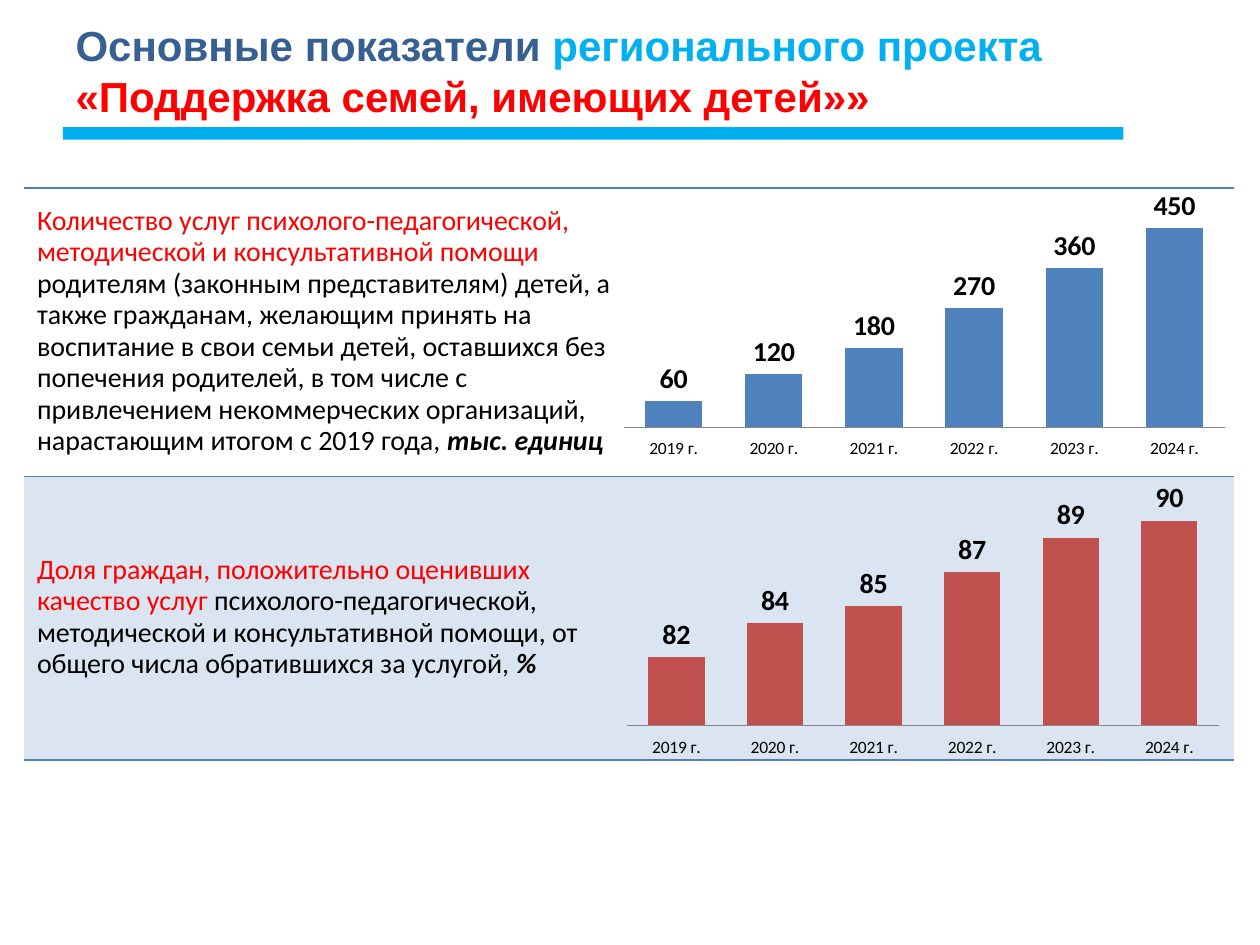
from lxml.etree import SubElement as Sub
from pptx import Presentation
from pptx.chart.data import CategoryChartData as Data
from pptx.dml.color import RGBColor as RGB
from pptx.enum.chart import XL_CHART_TYPE as Kind, XL_LABEL_POSITION as Spot
from pptx.enum.chart import XL_TICK_LABEL_POSITION as Tag, XL_TICK_MARK as Tick
from pptx.enum.shapes import MSO_SHAPE as Form
from pptx.enum.text import MSO_ANCHOR as Anchor, PP_ALIGN as Align
from pptx.oxml.ns import qn
from pptx.util import Pt

HUES = {"navy": "376092", "sky": "00B0F0", "red": "FF0000", "ink": "000000",
        "blue": "4F81BD", "brick": "C0504D", "pale": "DBE5F1", "gray": "868686"}
NONE = "{2D5ABB26-0587-4C30-8999-92F81FD0307C}"
YEARS = [f"{year} г." for year in range(2019, 2025)]
TITLE = [("Основные показатели ", "navy", {}),
         ("регионального проекта ", "sky", {}),
         ("«Поддержка семей, имеющих детей»»", "red", {})]
UNIT = {"bold": True, "italic": True}
ROWS = [
    [("Количество услуг психолого-педагогической, методической и "
      "консультативной помощи ", "red", {}),
     ("родителям (законным представителям) детей, а также гражданам, "
      "желающим принять на воспитание в свои семьи детей, оставшихся без "
      "попечения родителей, в том числе с привлечением некоммерческих "
      "организаций, нарастающим итогом с 2019 года, ", "ink", {}),
     ("тыс. единиц", "ink", UNIT)],
    [("Доля граждан, положительно оценивших качество услуг ", "red", {}),
     ("психолого-педагогической, методической и консультативной помощи, "
      "от общего числа обратившихся за услугой, ", "ink", {}),
     ("%", "ink", UNIT)],
]
COUNT = {"vals": (60, 120, 180, 270, 360, 450), "hue": "blue",
         "scale": {"minimum_scale": 0, "maximum_scale": 500},
         "plot": {"x": 0.02, "y": 0.06, "w": 0.96, "h": 0.84}}
SHARE = {"vals": (82, 84, 85, 87, 89, 90), "hue": "brick",
         "scale": {"minimum_scale": 78, "maximum_scale": 92},
         "plot": {"x": 0.02, "y": 0.02, "w": 0.96, "h": 0.87}}


def style(item, **form):
    """Set each given attribute on an object."""
    for name, value in form.items():
        setattr(item, name, value)


def hue(name):
    """Return a named colour."""
    return RGB.from_string(HUES[name])


def place(box):
    """Turn a box in points into lengths."""
    return [Pt(n) for n in box]


def write(para, parts, **form):
    """Write coloured runs into a paragraph."""
    for text, tint, extra in parts:
        run = para.add_run()
        run.text = text
        style(run.font, **form, **extra)
        run.font.color.rgb = hue(tint)


def head(slide, box):
    """Place the title and the bar below it."""
    x, y, w, h = box
    bar = slide.shapes.add_shape(Form.RECTANGLE, *place((x, y + h - 11.5, w, 7.2)))
    bar.shadow.inherit = False
    bar.fill.solid()
    bar.fill.fore_color.rgb = hue("sky")
    bar.line.fill.background()
    title = slide.shapes.title
    left, top, wide, high = place(box)
    style(title, left=left, top=top, width=wide, height=high)
    style(title.text_frame, word_wrap=True, vertical_anchor=Anchor.TOP)
    para = title.text_frame.paragraphs[0]
    style(para, alignment=Align.LEFT, line_spacing=Pt(29))
    write(para, TITLE, name="Arial", size=Pt(24), bold=True)


def rule(cell):
    """Draw the top and bottom borders of a cell."""
    props = cell._tc.get_or_add_tcPr()
    for at, side in enumerate(("a:lnT", "a:lnB")):
        line = props.makeelement(qn(side), {"w": str(Pt(1))})
        fill = Sub(line, qn("a:solidFill"))
        Sub(fill, qn("a:srgbClr"), val=HUES["blue"])
        props.insert(at, line)


def grid(slide, box, highs):
    """Place the table of indicators."""
    frame = slide.shapes.add_table(len(ROWS), 2, *place(box))
    table = frame.table
    style(table, first_row=False, horz_banding=False)
    table._tbl.tblPr.find(qn("a:tableStyleId")).text = NONE
    for row, high, parts, tint in zip(table.rows, highs, ROWS, (None, "pale")):
        row.height = Pt(high)
        for cell in row.cells:
            style(cell, vertical_anchor=Anchor.MIDDLE, margin_left=Pt(1.5),
                  margin_right=Pt(1.5), margin_top=0, margin_bottom=0)
            if tint:
                cell.fill.solid()
                cell.fill.fore_color.rgb = hue(tint)
            else:
                cell.fill.background()
            rule(cell)
        para = row.cells[0].text_frame.paragraphs[0]
        para._p.get_or_add_pPr().set("marL", str(Pt(6)))
        para.line_spacing = Pt(18)
        write(para, parts, name="Calibri", size=Pt(16))


def layout(chart, plot):
    """Fix the inner plot area as shares of the chart."""
    area = chart._chartSpace.chart.plotArea
    for old in area.findall(qn("c:layout")):
        area.remove(old)
    root = area.makeelement(qn("c:layout"), {})
    area.insert(0, root)
    inner = Sub(root, qn("c:manualLayout"))
    modes = {"layoutTarget": "inner", "xMode": "edge", "yMode": "edge"}
    for name, value in {**modes, **plot}.items():
        Sub(inner, qn(f"c:{name}"), val=str(value))


def bars(slide, box, vals, hue_name, scale, plot):
    """Place one column chart of yearly values."""
    data = Data()
    data.categories = YEARS
    data.add_series("Series 1", vals)
    chart = slide.shapes.add_chart(Kind.COLUMN_CLUSTERED, *place(box), data).chart
    style(chart, has_legend=False, has_title=False)
    style(chart.font, name="Calibri", size=Pt(10))
    chart.font.color.rgb = hue("ink")
    style(chart.value_axis, visible=False, has_major_gridlines=False, **scale)
    axis = chart.category_axis
    style(axis, major_tick_mark=Tick.NONE, minor_tick_mark=Tick.NONE,
          tick_label_position=Tag.LOW)
    axis.format.line.color.rgb = hue("gray")
    group = chart.plots[0]
    style(group, gap_width=75, vary_by_categories=False, has_data_labels=True)
    labels = group.data_labels
    style(labels, show_value=True, position=Spot.OUTSIDE_END)
    style(labels.font, name="Calibri", size=Pt(16), bold=True)
    labels.font.color.rgb = hue("ink")
    fill = group.series[0].format.fill
    fill.solid()
    fill.fore_color.rgb = hue(hue_name)
    layout(chart, plot)


def main():
    """Build and save the slide."""
    deck = Presentation()
    style(deck, slide_width=Pt(720), slide_height=Pt(540))
    slide = deck.slides.add_slide(deck.slide_layouts[5])
    head(slide, (36, 7.2, 606, 77))
    grid(slide, (13.7, 107.3, 691.2, 326.9), (164.9, 162))
    boxes = (349.2, 108.7, 357.8, 153.4), (351.4, 275, 352.1, 157.7)
    for box, info in zip(boxes, (COUNT, SHARE)):
        bars(slide, box, info["vals"], info["hue"], info["scale"], info["plot"])
    deck.save("out.pptx")


if __name__ == "__main__":
    main()
